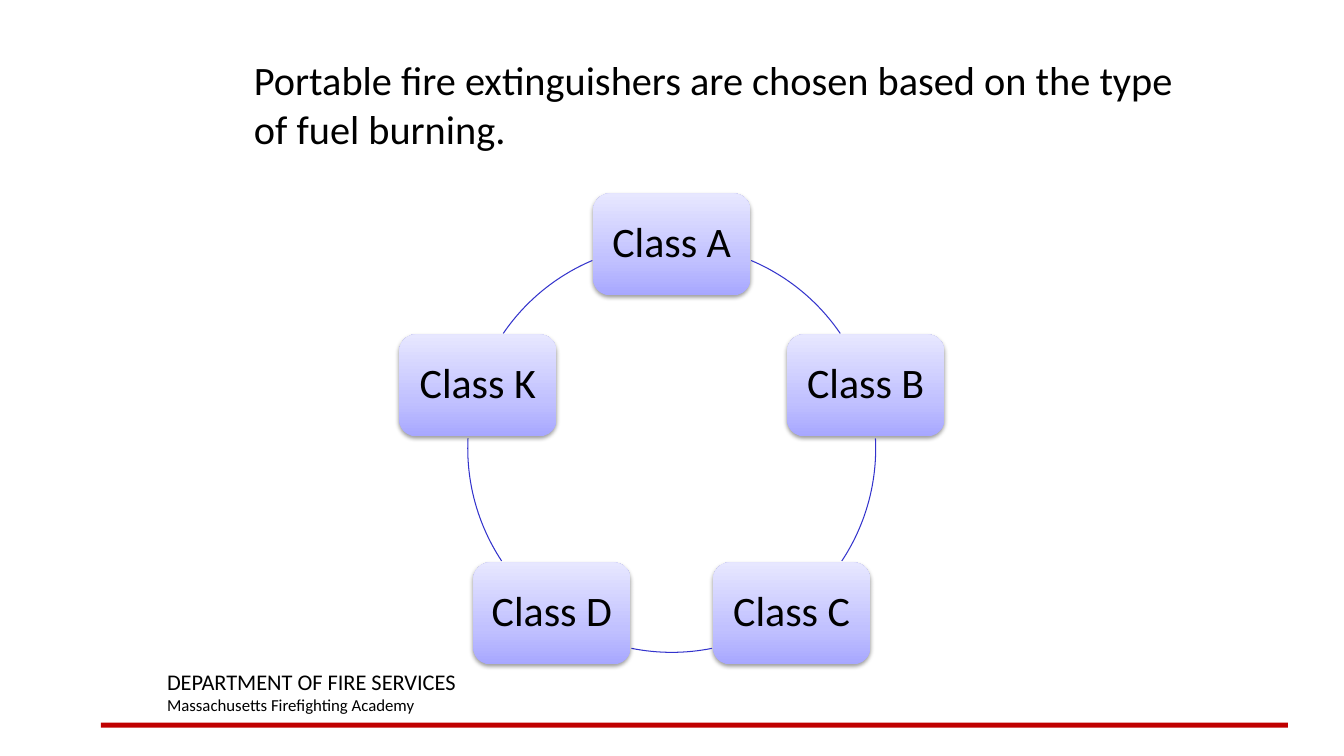
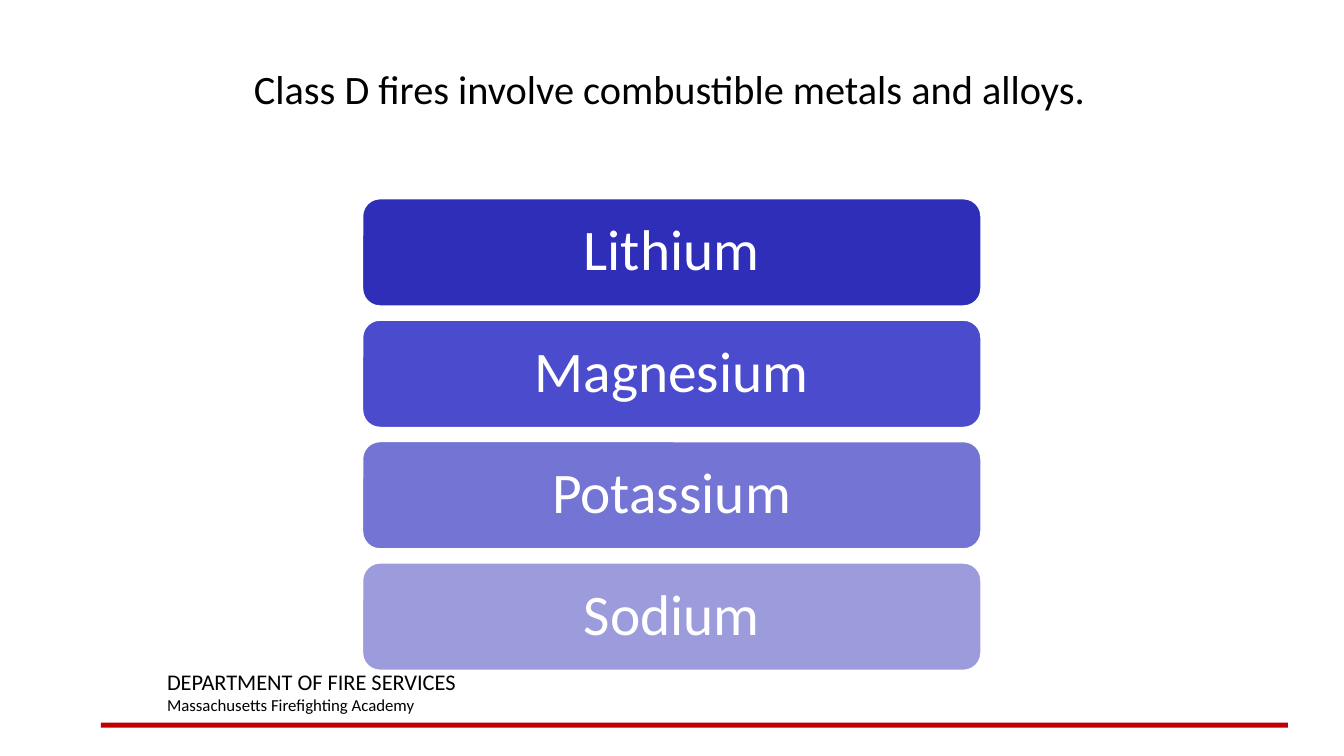
import math
from dataclasses import dataclass

from lxml import etree
from pptx import Presentation
from pptx import util as u
from pptx.dml.color import RGBColor
from pptx.enum import shapes, text
from pptx.oxml import ns

FONT = "Calibri"
BLACK, WHITE = "000000", "FFFFFF"
RULE_RED, RING_BLUE = "C00000", "3333CC"
BOX_GRADIENT = [(0, "A7A7FF"), (35, "C1C1FF"), (100, "E7E7FF")]


@dataclass
class Frame:
    """A rectangle in centimetres."""
    left: float
    top: float
    width: float
    height: float

    def lengths(self) -> tuple:
        return tuple(u.Cm(v) for v in (self.left, self.top, self.width, self.height))


@dataclass
class FireClass:
    label: str
    angle: float  # clockwise degrees from three o'clock


@dataclass
class Arc:
    start: float
    end: float


@dataclass
class Metal:
    name: str
    colour: str


FOOTER = Frame(3.96, 16.71, 14.4, 1.45)
FOOTER_LINES = [("DEPARTMENT OF FIRE SERVICES", 16),
                ("Massachusetts Firefighting Academy", 12)]
RULE = Frame(2.54, 18.21, 29.92, 0.13)

CENTRE_X, CENTRE_Y, RADIUS = 16.93, 11.3, 5.14
BOX_WIDTH, BOX_HEIGHT = 3.96, 2.57
FIRE_CLASSES = [FireClass(f"Class {letter}", -90 + 72 * i)
                for i, letter in enumerate("ABCDK")]
ARCS = [Arc(292.9, 325.7), Arc(357.2, 33.5), Arc(78.6, 101.4),
        Arc(146.5, 182.8), Arc(214.3, 247.1)]

FIRST_BAR = Frame(9.12, 4.99, 15.62, 2.74)
BAR_PITCH = 3.06
METALS = [Metal("Lithium", "2E2EB9"), Metal("Magnesium", "4B4BCD"),
          Metal("Potassium", "7474D4"), Metal("Sodium", "9C9CDD")]


def rgb(colour: str) -> RGBColor:
    return RGBColor.from_string(colour)


def add_run(paragraph, content: str, size: float, colour: str = BLACK) -> None:
    run = paragraph.add_run()
    run.text = content
    run.font.name = FONT
    run.font.size = u.Pt(size)
    run.font.color.rgb = rgb(colour)


def add_text(slide, frame: Frame, lines: list) -> None:
    """Add a text box with one paragraph per (text, size) pair."""
    text_frame = slide.shapes.add_textbox(*frame.lengths()).text_frame
    text_frame.word_wrap = True
    for i, (content, size) in enumerate(lines):
        paragraph = text_frame.add_paragraph() if i else text_frame.paragraphs[0]
        add_run(paragraph, content, size)


def add_plain_shape(slide, kind, frame: Frame):
    """Add a shape without fill, line or shadow."""
    shape = slide.shapes.add_shape(kind, *frame.lengths())
    shape.shadow.inherit = False
    shape.fill.background()
    shape.line.fill.background()
    return shape


def add_labelled_box(slide, frame: Frame, label: str, size: float, colour: str):
    shape = add_plain_shape(slide, shapes.MSO_SHAPE.ROUNDED_RECTANGLE, frame)
    text_frame = shape.text_frame
    text_frame.word_wrap = False
    text_frame.vertical_anchor = text.MSO_ANCHOR.MIDDLE
    paragraph = text_frame.paragraphs[0]
    paragraph.alignment = text.PP_ALIGN.CENTER
    paragraph.line_spacing = 0.9
    add_run(paragraph, label, size, colour)
    return shape


def add_colour(parent, colour: str):
    return etree.SubElement(parent, ns.qn("a:srgbClr"), val=colour)


def set_gradient(shape, stops: list) -> None:
    """Fill from bottom to top with (percent, colour) stops."""
    shape.fill.gradient()
    shape.fill.gradient_angle = 90
    stop_list = shape._element.spPr.find(".//" + ns.qn("a:gsLst"))
    for old_stop in list(stop_list):
        stop_list.remove(old_stop)
    for percent, colour in stops:
        stop = etree.SubElement(stop_list, ns.qn("a:gs"), pos=str(percent * 1000))
        add_colour(stop, colour)


def set_soft_shadow(shape) -> None:
    effects = shape._element.spPr.find(ns.qn("a:effectLst"))
    shadow = etree.SubElement(
        effects, ns.qn("a:outerShdw"), blurRad=str(u.Pt(3.1)), dist=str(u.Pt(1.6)),
        dir="5400000", rotWithShape="0")
    etree.SubElement(add_colour(shadow, BLACK), ns.qn("a:alpha"), val="38000")


def add_base_slide(presentation, title: str, title_frame: Frame):
    """Add a blank slide with the shared rule, footer and title."""
    slide = presentation.slides.add_slide(presentation.slide_layouts[6])
    rule = add_plain_shape(slide, shapes.MSO_SHAPE.RECTANGLE, RULE)
    rule.fill.solid()
    rule.fill.fore_color.rgb = rgb(RULE_RED)
    add_text(slide, FOOTER, FOOTER_LINES)
    add_text(slide, title_frame, [(title, 28.8)])
    return slide


def add_class_box(slide, fire_class: FireClass) -> None:
    angle = math.radians(fire_class.angle)
    frame = Frame(CENTRE_X + RADIUS * math.cos(angle) - BOX_WIDTH / 2,
                  CENTRE_Y + RADIUS * math.sin(angle) - BOX_HEIGHT / 2,
                  BOX_WIDTH, BOX_HEIGHT)
    box = add_labelled_box(slide, frame, fire_class.label, 30, BLACK)
    set_gradient(box, BOX_GRADIENT)
    set_soft_shadow(box)


def add_ring_arc(slide, arc: Arc) -> None:
    ring = Frame(CENTRE_X - RADIUS, CENTRE_Y - RADIUS, 2 * RADIUS, 2 * RADIUS)
    shape = add_plain_shape(slide, shapes.MSO_SHAPE.ARC, ring)
    # An adjustment of 0.6 is one degree.
    shape.adjustments[0] = arc.start * 0.6
    shape.adjustments[1] = arc.end * 0.6
    shape.line.color.rgb = rgb(RING_BLUE)
    shape.line.width = u.Pt(0.75)


def add_metal_bar(slide, row: int, metal: Metal) -> None:
    frame = Frame(FIRST_BAR.left, FIRST_BAR.top + row * BAR_PITCH,
                  FIRST_BAR.width, FIRST_BAR.height)
    bar = add_labelled_box(slide, frame, metal.name, 41, WHITE)
    bar.fill.solid()
    bar.fill.fore_color.rgb = rgb(metal.colour)
    bar.line.color.rgb = rgb(WHITE)
    bar.line.width = u.Pt(2)


def build_classes_slide(presentation) -> None:
    slide = add_base_slide(
        presentation,
        "Portable fire extinguishers are chosen based on the type of fuel burning.",
        Frame(6.15, 1.27, 23.7, 2.54))
    for fire_class, arc in zip(FIRE_CLASSES, ARCS):
        add_class_box(slide, fire_class)
        add_ring_arc(slide, arc)


def build_metals_slide(presentation) -> None:
    slide = add_base_slide(
        presentation, "Class D fires involve combustible metals and alloys.",
        Frame(6.15, 1.5, 21.56, 2.31))
    for row, metal in enumerate(METALS):
        add_metal_bar(slide, row, metal)


def main() -> None:
    presentation = Presentation()
    presentation.slide_width = u.Cm(33.87)
    presentation.slide_height = u.Cm(19.05)
    build_classes_slide(presentation)
    build_metals_slide(presentation)
    presentation.save("out.pptx")


if __name__ == "__main__":
    main()
